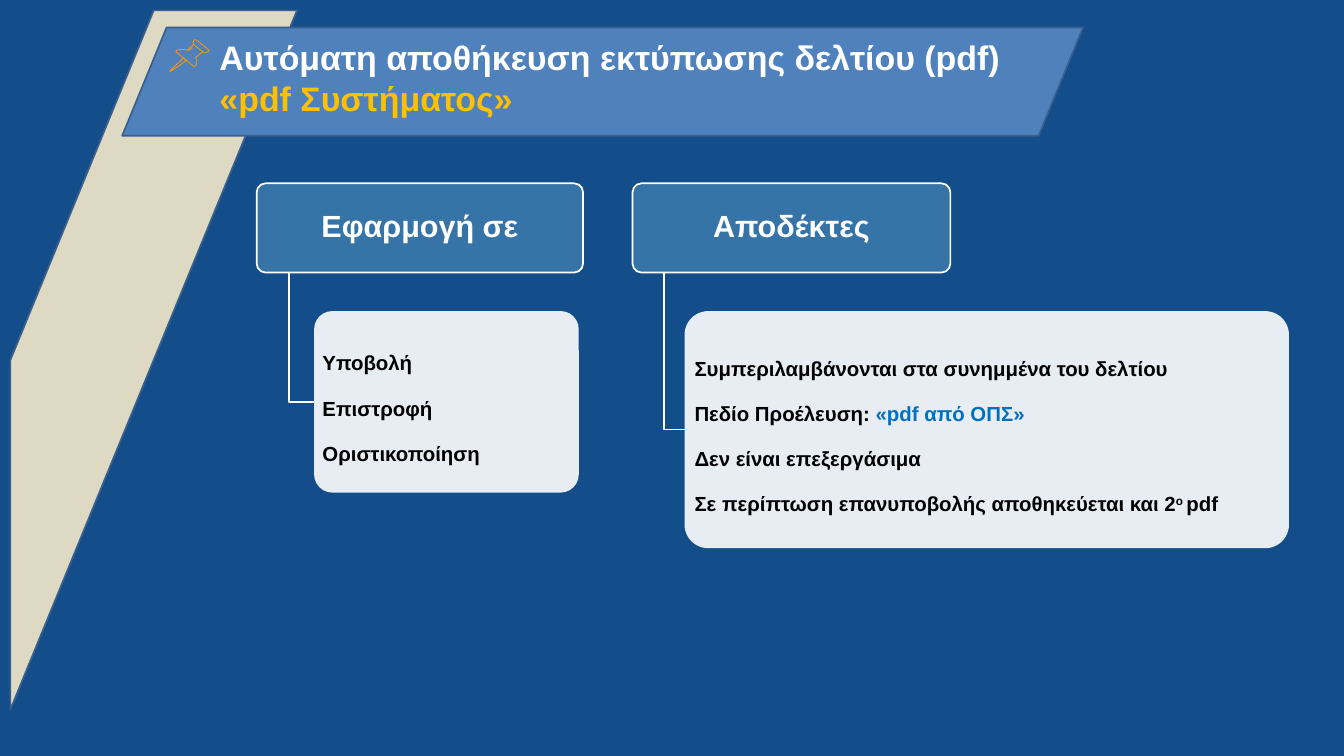
from typing import NamedTuple

from lxml import etree
from pptx import Presentation
from pptx import util as u
from pptx.dml.color import RGBColor
from pptx.enum import shapes, text
from pptx.oxml import ns

NAVY = RGBColor(0x13, 0x4E, 0x8A)
SAND = RGBColor(0xDD, 0xD9, 0xC3)
BANNER_BLUE = RGBColor(0x4F, 0x81, 0xBD)
EDGE_BLUE = RGBColor(0x3A, 0x5F, 0x8C)
HEADER_BLUE = RGBColor(0x36, 0x74, 0xA8)
LINK_BLUE = RGBColor(0x00, 0x70, 0xC0)
GOLD = RGBColor(0xFF, 0xC0, 0x00)
ORANGE = RGBColor(0xFF, 0x98, 0x00)
WHITE = RGBColor(0xFF, 0xFF, 0xFF)
BLACK = RGBColor(0x00, 0x00, 0x00)

FONT = "Arial"
HEADER_TOP, HEADER_HEIGHT = 3.0, 1.46
PANEL_TOP = 5.09
TRUNK_SHARE = 0.1  # the branch leaves the header at a tenth of its width

Point = tuple[float, float]


class Box(NamedTuple):
    left: float
    top: float
    width: float
    height: float


class Span(NamedTuple):
    text: str
    color: RGBColor = BLACK
    raised: bool = False


class Branch(NamedTuple):
    heading: str
    header: Box
    panel: Box
    lines: list[list[Span]]


class Outline(NamedTuple):
    points: list[Point]
    closed: bool


BRANCHES = [
    Branch(
        "Εφαρμογή σε",
        Box(4.2, HEADER_TOP, 5.34, HEADER_HEIGHT),
        Box(5.14, PANEL_TOP, 4.33, 2.97),
        [[Span("Υποβολή")], [Span("Επιστροφή")], [Span("Οριστικοποίηση")]],
    ),
    Branch(
        "Αποδέκτες",
        Box(10.35, HEADER_TOP, 5.2, HEADER_HEIGHT),
        Box(11.2, PANEL_TOP, 9.89, 3.88),
        [
            [Span("Συμπεριλαμβάνονται στα συνημμένα του δελτίου")],
            [Span("Πεδίο Προέλευση: "), Span("«pdf από ΟΠΣ»", LINK_BLUE)],
            [Span("Δεν είναι επεξεργάσιμα")],
            [Span("Σε περίπτωση επανυποβολής αποθηκεύεται και 2"),
             Span("ο ", raised=True), Span("pdf")],
        ],
    ),
]

PIN = [
    # needle
    Outline([(3, 0.95), (2.8, 1.14), (2.78, 1.17), (2.82, 1.15), (3.05, 0.99)], True),
    # cap
    Outline([(3.17, 0.73), (3.32, 0.85), (3.36, 0.86), (3.4, 0.85), (3.42, 0.83),
             (3.41, 0.81), (3.21, 0.65), (3.18, 0.65), (3.16, 0.69)], True),
    # body
    Outline([(3.17, 0.73), (3.06, 0.82), (3.01, 0.81), (2.95, 0.81), (2.9, 0.82),
             (2.88, 0.83), (2.88, 0.85), (3.16, 1.08), (3.18, 1.09), (3.2, 1.08),
             (3.22, 1.04), (3.22, 0.98), (3.2, 0.94), (3.32, 0.85)], False),
    # highlight
    Outline([(3.08, 0.83), (3.15, 0.78)], False),
]


def add_block(slide, preset, box: Box, fill: RGBColor, edge: RGBColor | None = None,
              adjust: float | None = None):
    block = slide.shapes.add_shape(preset, *map(u.Inches, box))
    block.shadow.inherit = False
    block.fill.solid()
    block.fill.fore_color.rgb = fill
    if edge is None:
        block.line.fill.background()
    else:
        block.line.color.rgb = edge
        block.line.width = u.Pt(2)
    if adjust is not None:
        block.adjustments[0] = adjust
    return block


def add_outline(slide, outline: Outline, color: RGBColor, width: float) -> None:
    start, *rest = [(u.Inches(x), u.Inches(y)) for x, y in outline.points]
    builder = slide.shapes.build_freeform(*start)
    builder.add_line_segments(rest, close=outline.closed)
    stroke = builder.convert_to_shape()
    stroke.shadow.inherit = False
    stroke.fill.background()
    stroke.line.color.rgb = color
    stroke.line.width = u.Pt(width)


def set_opacity(block, percent: int) -> None:
    color = block.fill._xPr.find(ns.qn("a:solidFill"))[0]
    etree.SubElement(color, ns.qn("a:alpha")).set("val", str(percent * 1000))


def write_lines(frame, lines: list[list[Span]], size: float, align, spacing: float,
                after: float) -> None:
    """Fill a text frame with one paragraph for each list of spans."""
    frame.word_wrap = True
    frame.text = "\n".join(spans[0].text for spans in lines)
    for paragraph, spans in zip(frame.paragraphs, lines):
        paragraph.alignment = align
        paragraph.line_spacing = spacing
        paragraph.space_after = u.Pt(after)
        for span in spans[1:]:
            paragraph.add_run().text = span.text
        for run, span in zip(paragraph.runs, spans):
            run.font.name = FONT
            run.font.size = u.Pt(size)
            run.font.bold = True
            run.font.color.rgb = span.color
            if span.raised:
                run._r.get_or_add_rPr().set("baseline", "30000")


def set_margins(frame, side: float, top: float) -> None:
    frame.margin_left = frame.margin_right = u.Inches(side)
    frame.margin_top = frame.margin_bottom = u.Inches(top)
    frame.vertical_anchor = text.MSO_ANCHOR.MIDDLE


def add_title(slide, banner) -> None:
    title = slide.shapes.title
    banner.element.addnext(title.element)
    title.left, title.top, title.width, title.height = map(
        u.Inches, Box(3.49, 0.55, 13.65, 1.45))
    title.text_frame.vertical_anchor = text.MSO_ANCHOR.TOP
    title.text_frame.auto_size = text.MSO_AUTO_SIZE.NONE
    write_lines(title.text_frame,
                [[Span("Αυτόματη αποθήκευση εκτύπωσης δελτίου (pdf)", WHITE)],
                 [Span("«pdf Συστήματος»", GOLD)]],
                40, text.PP_ALIGN.LEFT, 1.0, 0)


def add_branch(slide, branch: Branch) -> None:
    rounded = shapes.MSO_SHAPE.ROUNDED_RECTANGLE
    header, panel = branch.header, branch.panel

    heading = add_block(slide, rounded, header, HEADER_BLUE, WHITE, 0.1)
    set_margins(heading.text_frame, 0.07, 0.05)
    write_lines(heading.text_frame, [[Span(branch.heading, WHITE)]],
                36, text.PP_ALIGN.CENTER, 0.9, 15)

    trunk = header.left + header.width * TRUNK_SHARE
    middle = panel.top + panel.height / 2
    elbow = [(trunk, header.top + header.height), (trunk, middle), (panel.left, middle)]
    add_outline(slide, Outline(elbow, False), WHITE, 2)

    details = add_block(slide, rounded, panel, WHITE, adjust=0.1)
    set_opacity(details, 90)
    set_margins(details.text_frame, 0.05, 0.03)
    write_lines(details.text_frame, branch.lines, 24, text.PP_ALIGN.LEFT, 1.5, 10)


def main() -> None:
    prs = Presentation()
    prs.slide_width, prs.slide_height = u.Inches(21.99), u.Inches(12.37)
    slide = prs.slides.add_slide(prs.slide_layouts[5])
    slide.background.fill.solid()
    slide.background.fill.fore_color.rgb = NAVY

    add_block(slide, shapes.MSO_SHAPE.DIAGONAL_STRIPE, Box(0.17, 0.17, 4.69, 11.44),
              SAND, EDGE_BLUE)
    banner = add_block(slide, shapes.MSO_SHAPE.PARALLELOGRAM, Box(2, 0.45, 15.72, 1.77),
                       BANNER_BLUE, EDGE_BLUE, 0.41)
    add_title(slide, banner)
    for outline in PIN:
        add_outline(slide, outline, ORANGE, 0.96)
    for branch in BRANCHES:
        add_branch(slide, branch)
    prs.save("out.pptx")


if __name__ == "__main__":
    main()
